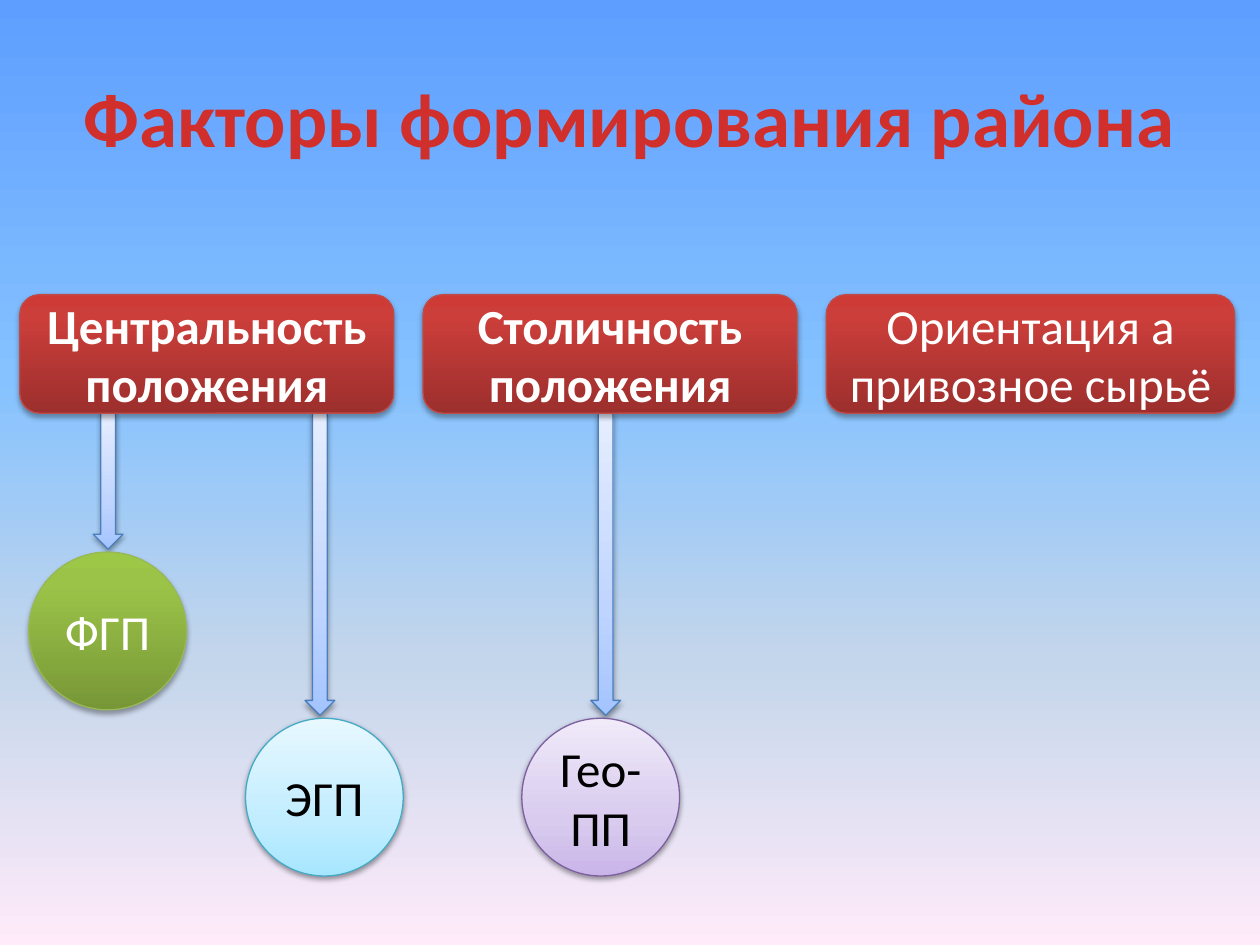
from lxml import etree
from pptx import Presentation
from pptx.dml.color import RGBColor
from pptx.enum.shapes import MSO_SHAPE
from pptx.enum.text import MSO_ANCHOR, PP_ALIGN
from pptx.oxml.ns import qn
from pptx.util import Cm, Pt

ARROW = MSO_SHAPE.DOWN_ARROW
ROUND = MSO_SHAPE.ROUNDED_RECTANGLE
OVAL = MSO_SHAPE.OVAL
MIDDLE = MSO_ANCHOR.MIDDLE
CENTER = PP_ALIGN.CENTER

FONT = "Calibri"
HEX = {
    "white": "FFFFFF", "black": "000000",
    "red line": "BF4C48", "green line": "98B955", "cyan line": "46AAC5",
    "violet line": "7D60A0", "blue line": "4B7EBC",
}
# Gradient stops: position in percent and colour
GRADS = {
    "sky": [(0, "5E9EFF"), (40, "85C2FF"), (70, "C4D6EB"), (100, "FFEBFA")],
    "title": [(0, "FC7C7A"), (75, "D02F2C"), (100, "C70500")],
    "red": [(0, "9C2F2D"), (80, "CB3E3A"), (100, "CE3B37")],
    "green": [(0, "779737"), (80, "9BC348"), (100, "9DC746")],
    "cyan": [(0, "A7E6FF"), (35, "C1EDFF"), (100, "E7F8FF")],
    "violet": [(0, "C9B5E8"), (35, "D8CBEE"), (100, "F0EAF9")],
    "blue": [(0, "A4C4FF"), (35, "BFD4FF"), (100, "E6EEFF")],
}
DARK = ("red", "green")  # deep fills with white text
DISC = 3.18              # circle diameter, cm
SHAFT = 0.6              # arrow width, cm
GAP = 0.06               # space between arrow tip and circle, cm


def blend(fill, node, name, down=False):
    """Fill with a vertical gradient, from the top if down, else from the bottom."""
    fill.gradient()
    fill.gradient_angle = 270 if down else 90
    stops = next(node.iter(qn("a:gsLst")))
    for stop in list(stops):
        stops.remove(stop)
    for pos, tone in GRADS[name]:
        stop = etree.SubElement(stops, qn("a:gs"), pos=str(pos * 1000))
        etree.SubElement(stop, qn("a:srgbClr"), val=tone)


def shade(shape, alpha, dist):
    """Give the shape a soft shadow below it."""
    shape.shadow.inherit = False
    effects = next(shape._element.iter(qn("a:effectLst")))
    outer = etree.SubElement(
        effects, qn("a:outerShdw"), blurRad=str(Pt(3.15)), dist=str(Pt(dist)),
        dir="5400000", rotWithShape="0")
    tone = etree.SubElement(outer, qn("a:srgbClr"), val=HEX["black"])
    etree.SubElement(tone, qn("a:alpha"), val=str(alpha * 1000))


def write(shape, text, size, bold=False):
    """Set centred text and return its runs."""
    frame = shape.text_frame
    frame.word_wrap = True
    frame.vertical_anchor = MIDDLE
    frame.text = text
    runs = []
    for para in frame.paragraphs:
        para.alignment = CENTER
        runs.extend(para.runs)
    for run in runs:
        run.font.name = FONT
        run.font.size = Pt(size)
        run.font.bold = bold
    return runs


def add_part(slide, kind, box, hue, text="", bold=False):
    shape = slide.shapes.add_shape(kind, *map(Cm, box))
    blend(shape.fill, shape._element, hue)
    shape.line.color.rgb = RGBColor.from_string(HEX[hue + " line"])
    shape.line.width = Pt(0.75)
    dark = hue in DARK
    shade(shape, *((35, 1.8) if dark else (38, 1.6)))
    if text:
        for run in write(shape, text, 28, bold):
            tone = HEX["white" if dark else "black"]
            run.font.color.rgb = RGBColor.from_string(tone)


def add_title(slide, box, text):
    shape = slide.shapes.add_textbox(*map(Cm, box))
    for run in write(shape, text, 44, True):
        blend(run.font.fill, run._r, "title", down=True)


def add_factor(slide, box, text, bold, leaves):
    """Draw a factor box; leaves are (circle x, y, arrow x, hue, text) from its corner."""
    left, top, _, high = box
    for x, y, stem, hue, label in leaves:
        add_part(slide, ARROW, (left + stem, top + high, SHAFT, y - high - GAP), "blue")
        add_part(slide, OVAL, (left + x, top + y, DISC, DISC), hue, label)
    add_part(slide, ROUND, box, "red", text, bold)


def main():
    deck = Presentation()
    deck.slide_width, deck.slide_height = Cm(25.4), Cm(19.05)
    slide = deck.slides.add_slide(deck.slide_layouts[6])
    blend(slide.background.fill, slide._element, "sky", down=True)

    add_title(slide, (1.27, 0.76, 22.86, 3.18), "Факторы формирования района")

    # Row of factors, each with its branches
    factors = [
        (7.54, "Центральность положения", True, [
            (0.18, 5.19, 1.48, "green", "ФГП"),
            (4.55, 8.54, 5.75, "cyan", "ЭГП")]),
        (7.54, "Столичность положения", True, [
            (1.99, 8.54, 3.38, "violet", "Гео-\nПП")]),
        (8.23, "Ориентация а привозное сырьё", False, []),
    ]
    left = 0.4
    for wide, text, bold, leaves in factors:
        add_factor(slide, (left, 5.94, wide, 2.39), text, bold, leaves)
        left += wide + 0.59

    deck.save("out.pptx")


if __name__ == "__main__":
    main()
